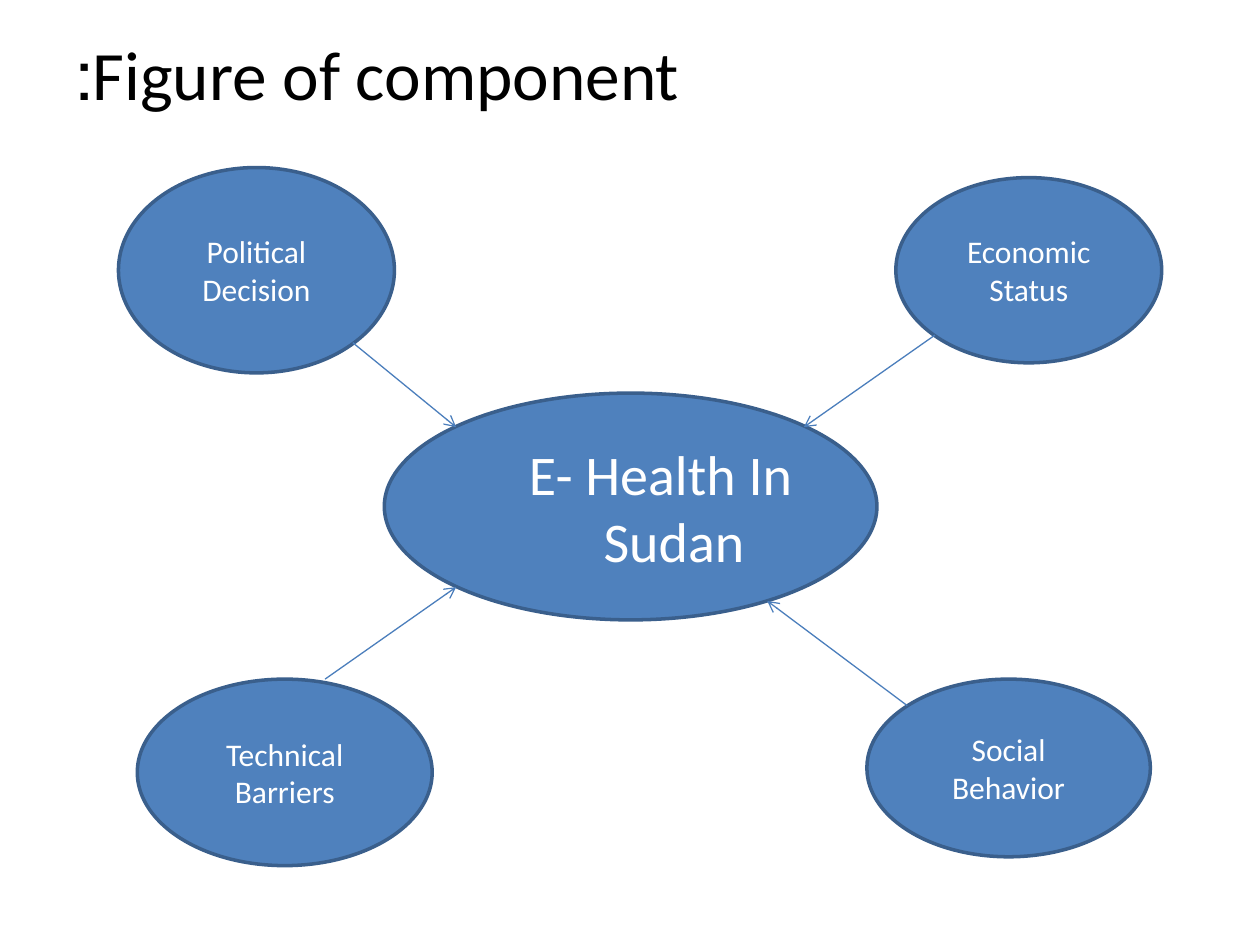
from pptx import Presentation
from pptx.dml.color import RGBColor
from pptx.enum.shapes import MSO_CONNECTOR, MSO_SHAPE
from pptx.enum.text import MSO_ANCHOR, PP_ALIGN
from pptx.oxml.ns import qn
from pptx.util import Inches, Pt
from lxml.etree import SubElement

FONT = "Calibri"
BLUE, OUTLINE, ARROW = "4F81BD", "3A5F8C", "4B7EBC"
BLACK, WHITE = "000000", "FFFFFF"

# Outer factors: text and left, top, width, height
FACTORS = [
    ("Political Decision", (0.94, 1.33, 2.19, 1.63)),
    ("Economic Status", (7.11, 1.41, 2.11, 1.47)),
    ("Technical Barriers", (1.09, 5.39, 2.34, 1.48)),
    ("Social Behavior", (6.88, 5.39, 2.25, 1.41)),
]

# Arrows from each factor to the centre: x1, y1, x2, y2
ARROWS = [
    (2.8, 2.72, 3.62, 3.39),
    (7.42, 2.66, 6.38, 3.39),
    (7.2, 5.6, 6.09, 4.77),
    (2.58, 5.39, 3.62, 4.66),
]


def rgb(value):
    return RGBColor.from_string(value)


def write_text(shape, text, size, color, align):
    """Fill the shape with one right-to-left paragraph."""
    tf = shape.text_frame
    tf.word_wrap = True
    tf.vertical_anchor = MSO_ANCHOR.MIDDLE
    p = tf.paragraphs[0]
    p.alignment = align
    p._p.get_or_add_pPr().set("rtl", "1")
    r = p.add_run()
    r.text = text
    r.font.name = FONT
    r.font.size = Pt(size)
    r.font.color.rgb = rgb(color)
    return p


def add_title(s, text):
    sp = s.shapes.add_textbox(Inches(0.5), Inches(0.3), Inches(9), Inches(0.56))
    write_text(sp, text, 39.6, BLACK, PP_ALIGN.LEFT)


def add_ellipse(s, box, text, size=18, align=PP_ALIGN.CENTER):
    sp = s.shapes.add_shape(MSO_SHAPE.OVAL, *map(Inches, box))
    sp.shadow.inherit = False
    sp.fill.solid()
    sp.fill.fore_color.rgb = rgb(BLUE)
    sp.line.color.rgb = rgb(OUTLINE)
    sp.line.width = Pt(2)
    return write_text(sp, text, size, WHITE, align)


def add_arrow(s, ends):
    line = s.shapes.add_connector(MSO_CONNECTOR.STRAIGHT, *map(Inches, ends))
    line.line.color.rgb = rgb(ARROW)
    line.line.width = Pt(0.75)
    SubElement(line.line._get_or_add_ln(), qn("a:tailEnd"), type="arrow")
    SubElement(line._element.spPr, qn("a:effectLst"))


def main():
    prs = Presentation()
    prs.slide_width, prs.slide_height = Inches(10), Inches(7.5)
    s = prs.slides.add_slide(prs.slide_layouts[6])

    add_title(s, "Figure of component:")

    # Centre, with a hanging indent
    p = add_ellipse(s, (3.05, 3.12, 3.91, 1.8), "E- Health In Sudan",
                    32, PP_ALIGN.RIGHT)
    pPr = p._p.get_or_add_pPr()
    pPr.set("marL", str(Inches(0.38)))
    pPr.set("indent", str(Inches(-0.38)))

    # Surrounding factors and their arrows
    for text, box in FACTORS:
        add_ellipse(s, box, text)
    for ends in ARROWS:
        add_arrow(s, ends)

    prs.save("out.pptx")


if __name__ == "__main__":
    main()
